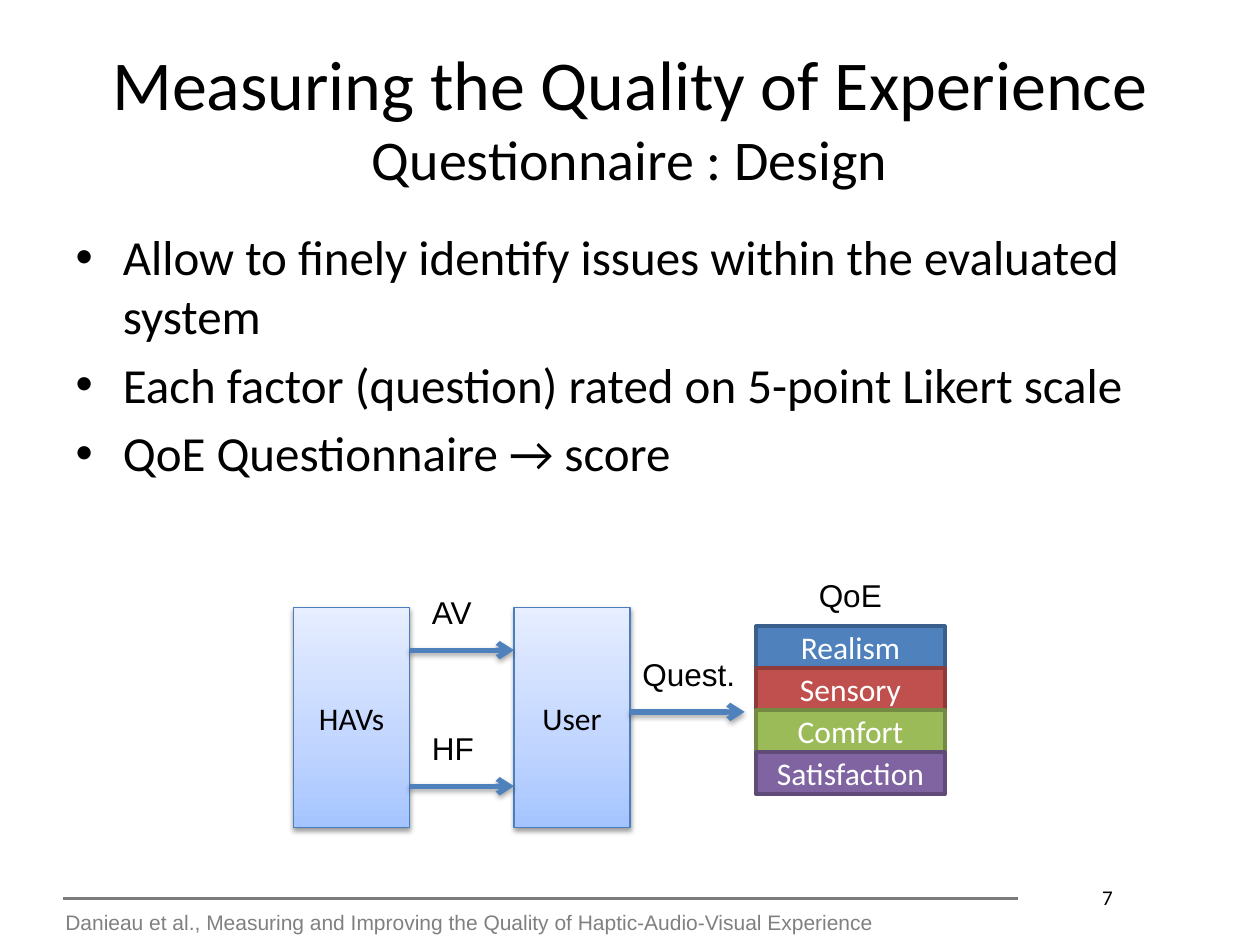
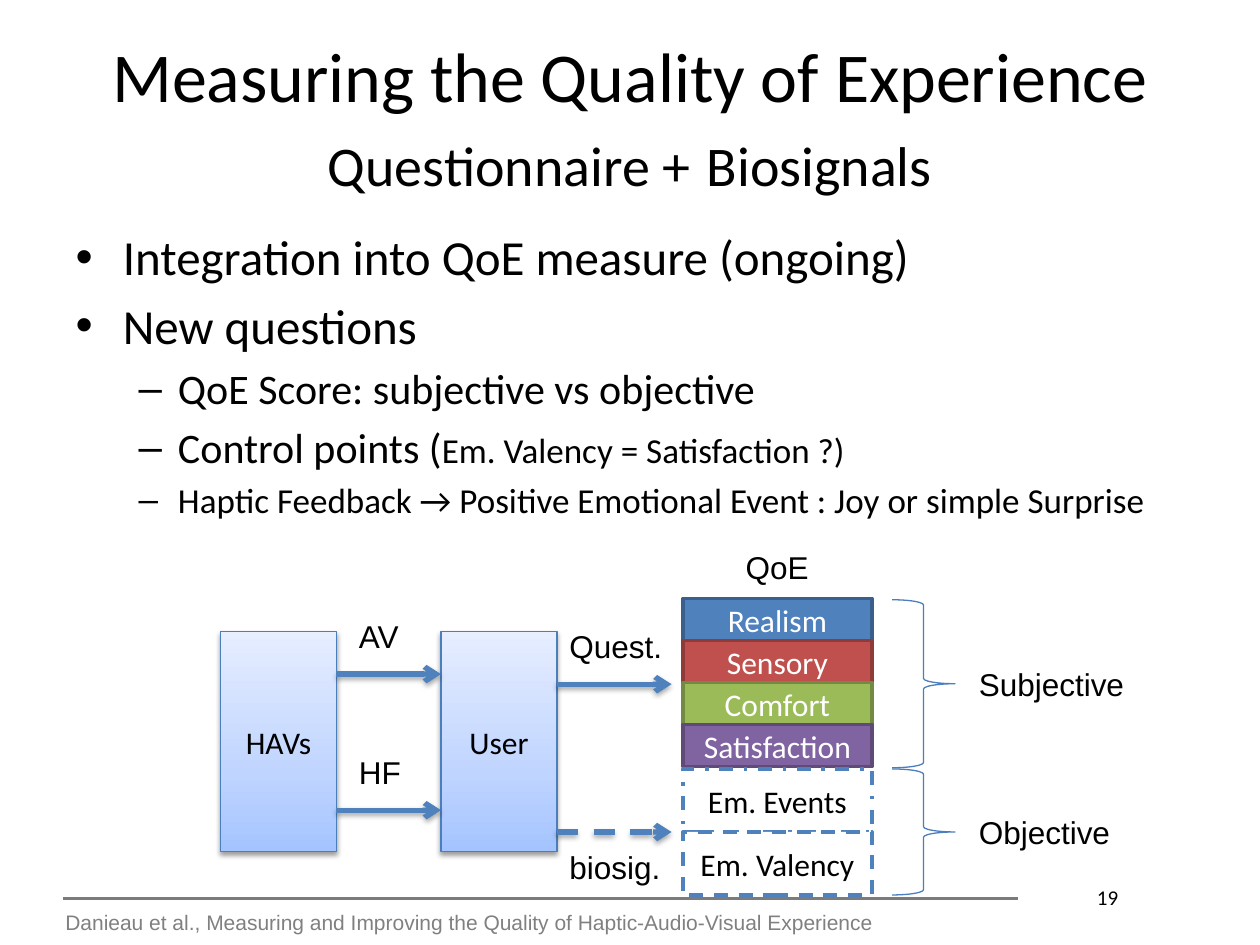
from copy import deepcopy

from lxml.etree import SubElement
from pptx import Presentation
from pptx.dml.color import RGBColor
from pptx.enum.dml import MSO_LINE_DASH_STYLE as Dash
from pptx.enum.shapes import MSO_CONNECTOR as Connector, MSO_SHAPE as Shape
from pptx.enum.text import MSO_ANCHOR as Anchor, MSO_AUTO_SIZE as AutoSize, PP_ALIGN as Align
from pptx.oxml.ns import qn
from pptx.util import Inches, Pt

BLACK, WHITE, BLUE, THIN_BLUE, GREY = "000000", "FFFFFF", "4F81BD", "4B7EBC", "808080"
BOX_GRADIENT = [(0, "A4C4FF"), (0.35, "BFD4FF"), (1, "E6EEFF")]
FACTORS = [
    ("Realism", BLUE, "3A5F8C"),
    ("Sensory", "C0504D", "8E3B39"),
    ("Comfort", "9BBB59", "738A42"),
    ("Satisfaction", "8064A2", "5F4A78"),
]
LABEL_WIDTHS = {"QoE": 0.71, "Quest.": 0.95, "AV": 0.52, "HF": 0.54,
                "biosig.": 0.93, "Subjective": 1.37, "Objective": 1.25}
BOX_WIDTH, BOX_HEIGHT, BOX_PITCH = 0.92, 1.75, 1.75
FACTOR_WIDTH, FACTOR_HEIGHT = 1.5, 1 / 3
SIGNAL_HEIGHT = 0.5

# A list item is its level followed by (text, size) runs.
SLIDES = [
    {
        "number": "7",
        "title": [("Measuring the Quality of Experience\v", 40), ("Questionnaire : Design", 32)],
        "items": [
            (0, [("Allow to finely identify issues within the evaluated system", 28)]),
            (0, [("Each factor (question) rated on 5-point Likert scale", 28)]),
            (0, [("QoE Questionnaire → score", 28)]),
        ],
        "left": 2.33, "top": 4.82, "stack_top": 4.97, "questionnaire": 5.65,
        "signals": [],
    },
    {
        "number": "19",
        "title": [("Measuring the Quality of Experience ", 40), ("Questionnaire +", 32),
                  (" ", 40), ("Biosignals", 32)],
        "items": [
            (0, [("Integration into QoE measure (ongoing)", 28)]),
            (0, [("New questions", 28)]),
            (1, [("QoE Score: subjective vs objective", 24)]),
            (1, [("Control points (", 24), ("Em. Valency = Satisfaction ?)", 20)]),
            (1, [("Haptic Feedback → Positive Emotional Event : Joy or simple Surprise", 20)]),
        ],
        "left": 1.75, "top": 5.01, "stack_top": 4.75, "questionnaire": 5.43,
        "signals": [("Em. Events", Dash.DASH_DOT), ("Em. Valency", Dash.DASH)],
    },
]


def write(paragraph, runs, colour=BLACK, font_name="Calibri"):
    """Add (text, size) runs; a vertical tab at the end of a text breaks the line."""
    for text, size in runs:
        run = paragraph.add_run()
        run.text = text.rstrip("\v")
        font_format = {"name": font_name, "size": Pt(size)}
        for attribute, value in font_format.items():
            setattr(run.font, attribute, value)
        run.font.color.rgb = RGBColor.from_string(colour)
        if text.endswith("\v"):
            paragraph.add_line_break()


def finish(shape, line_colour, line_width, dash=None, shadow=None):
    """Set the outline, and a soft shadow below if its opacity is given."""
    line_format = {"width": Pt(line_width), "dash_style": dash}
    for attribute, value in line_format.items():
        setattr(shape.line, attribute, value)
    shape.line.color.rgb = RGBColor.from_string(line_colour)
    effects = SubElement(shape.element.spPr, qn("a:effectLst"))
    if shadow:
        outer = SubElement(effects, qn("a:outerShdw"), blurRad=str(Pt(3.1)), dist=str(Pt(1.7)),
                           dir="5400000", rotWithShape="0")
        colour = SubElement(outer, qn("a:srgbClr"), val=BLACK)
        SubElement(colour, qn("a:alpha"), val=str(shadow * 1000))


presentation = Presentation()
presentation.slide_width, presentation.slide_height = Inches(10), Inches(7.5)

for content in SLIDES:
    slide = presentation.slides.add_slide(presentation.slide_layouts[1])
    shapes = slide.shapes

    # Title and list
    title, body = slide.placeholders
    for placeholder, top, height in ((title, 0.3, 1.25), (body, 1.75, 4.95)):
        placeholder.left, placeholder.top = Inches(0.5), Inches(top)
        placeholder.width, placeholder.height = Inches(9), Inches(height)
        placeholder.text_frame.auto_size = AutoSize.NONE
    write(title.text_frame.paragraphs[0], content["title"])
    for index, (level, runs) in enumerate(content["items"]):
        frame = body.text_frame
        paragraph = frame.add_paragraph() if index else frame.paragraphs[0]
        paragraph.level = level
        write(paragraph, runs)

    # Footer
    rule = shapes.add_connector(Connector.STRAIGHT, Inches(0.5), Inches(7.13),
                                Inches(8.08), Inches(7.13))
    finish(rule, "7B7B7B", 1.5)
    footer = shapes.add_textbox(Inches(0.42), Inches(7.17), Inches(7.25), Inches(0.3))
    footer.text_frame.word_wrap = True
    write(footer.text_frame.paragraphs[0],
          [("Danieau et al., Measuring and Improving the Quality of "
            "Haptic-Audio-Visual Experience", 12)], GREY, "Arial")
    number = shapes.add_textbox(Inches(8.08), Inches(6.92), Inches(1.42), Inches(0.4))
    number.text_frame.word_wrap = True
    number.text_frame.vertical_anchor = Anchor.MIDDLE
    number.text_frame.paragraphs[0].alignment = Align.CENTER
    write(number.text_frame.paragraphs[0], [(content["number"], 12)])

    # System and user boxes
    left, top = content["left"], content["top"]
    user_left = left + BOX_PITCH
    for name, box_left in (("HAVs", left), ("User", user_left)):
        box = shapes.add_shape(Shape.RECTANGLE, Inches(box_left), Inches(top),
                               Inches(BOX_WIDTH), Inches(BOX_HEIGHT))
        box.fill.gradient()
        box.fill.gradient_angle = 90
        stop_list = box.element.spPr.find(".//" + qn("a:gsLst"))
        stop_list.append(deepcopy(stop_list[0]))
        for stop, (position, colour) in zip(box.fill.gradient_stops, BOX_GRADIENT):
            stop.position = position
            stop.color.rgb = RGBColor.from_string(colour)
        finish(box, THIN_BLUE, 0.75, shadow=38)
        write(box.text_frame.paragraphs[0], [(name, 18)])

    # Stack of factors, then of biosignal measures
    stack_left, stack_top = user_left + 1.92, content["stack_top"]
    signals_top = stack_top + len(FACTORS) * FACTOR_HEIGHT + 0.02
    cells = [(name, stack_top + row * FACTOR_HEIGHT, FACTOR_HEIGHT, fill, line, WHITE, None)
             for row, (name, fill, line) in enumerate(FACTORS)]
    cells += [(name, signals_top + row * SIGNAL_HEIGHT, SIGNAL_HEIGHT, WHITE, BLUE, BLACK, dash)
              for row, (name, dash) in enumerate(content["signals"])]
    for name, cell_top, height, fill, line, text_colour, dash in cells:
        cell = shapes.add_shape(Shape.RECTANGLE, Inches(stack_left), Inches(cell_top),
                                Inches(FACTOR_WIDTH), Inches(height))
        cell.fill.solid()
        cell.fill.fore_color.rgb = RGBColor.from_string(fill)
        finish(cell, line, 2, dash)
        write(cell.text_frame.paragraphs[0], [(name, 18)], text_colour)

    # Arrows
    questionnaire = content["questionnaire"]
    box_right, user_right = left + BOX_WIDTH, user_left + BOX_WIDTH
    arrows = [
        (box_right, user_left, top + 0.34, None),
        (box_right, user_left, top + 1.42, None),
        (user_right, user_right + 0.91, questionnaire, None),
    ]
    labels = [
        ("QoE", stack_left + 0.4, stack_top - 0.45),
        ("Quest.", user_right, questionnaire - 0.5),
        ("AV", left + 1, top - 0.16),
        ("HF", left + 1, top + 0.92),
    ]

    # Braces that sort the measures
    if content["signals"]:
        signals_height = len(content["signals"]) * SIGNAL_HEIGHT
        signals_middle = signals_top + signals_height / 2
        arrows.append((user_right, user_right + 0.91, signals_middle, Dash.DASH))
        labels.append(("biosig.", user_right, signals_middle + 0.08))
        braces = [("Subjective", stack_top + 0.01, len(FACTORS) * FACTOR_HEIGHT),
                  ("Objective", signals_top, signals_height)]
        for name, brace_top, height in braces:
            brace = shapes.add_shape(Shape.RIGHT_BRACE, Inches(stack_left + 1.66),
                                     Inches(brace_top), Inches(0.5), Inches(height))
            brace.fill.background()
            finish(brace, THIN_BLUE, 0.75)
            labels.append((name, stack_left + 2.25, brace_top + height / 2 - 0.2))

    for start, end, y, dash in arrows:
        arrow = shapes.add_connector(Connector.STRAIGHT, Inches(start), Inches(y),
                                     Inches(end), Inches(y))
        finish(arrow, BLUE, 3, dash, shadow=35)
        SubElement(arrow.line._get_or_add_ln(), qn("a:tailEnd"), type="arrow")

    for text, label_left, label_top in labels:
        label = shapes.add_textbox(Inches(label_left), Inches(label_top),
                                   Inches(LABEL_WIDTHS[text]), Inches(0.4))
        label.text_frame.word_wrap = False
        label.text_frame.auto_size = AutoSize.SHAPE_TO_FIT_TEXT
        write(label.text_frame.paragraphs[0], [(text, 18)], font_name="Arial")

presentation.save("out.pptx")
